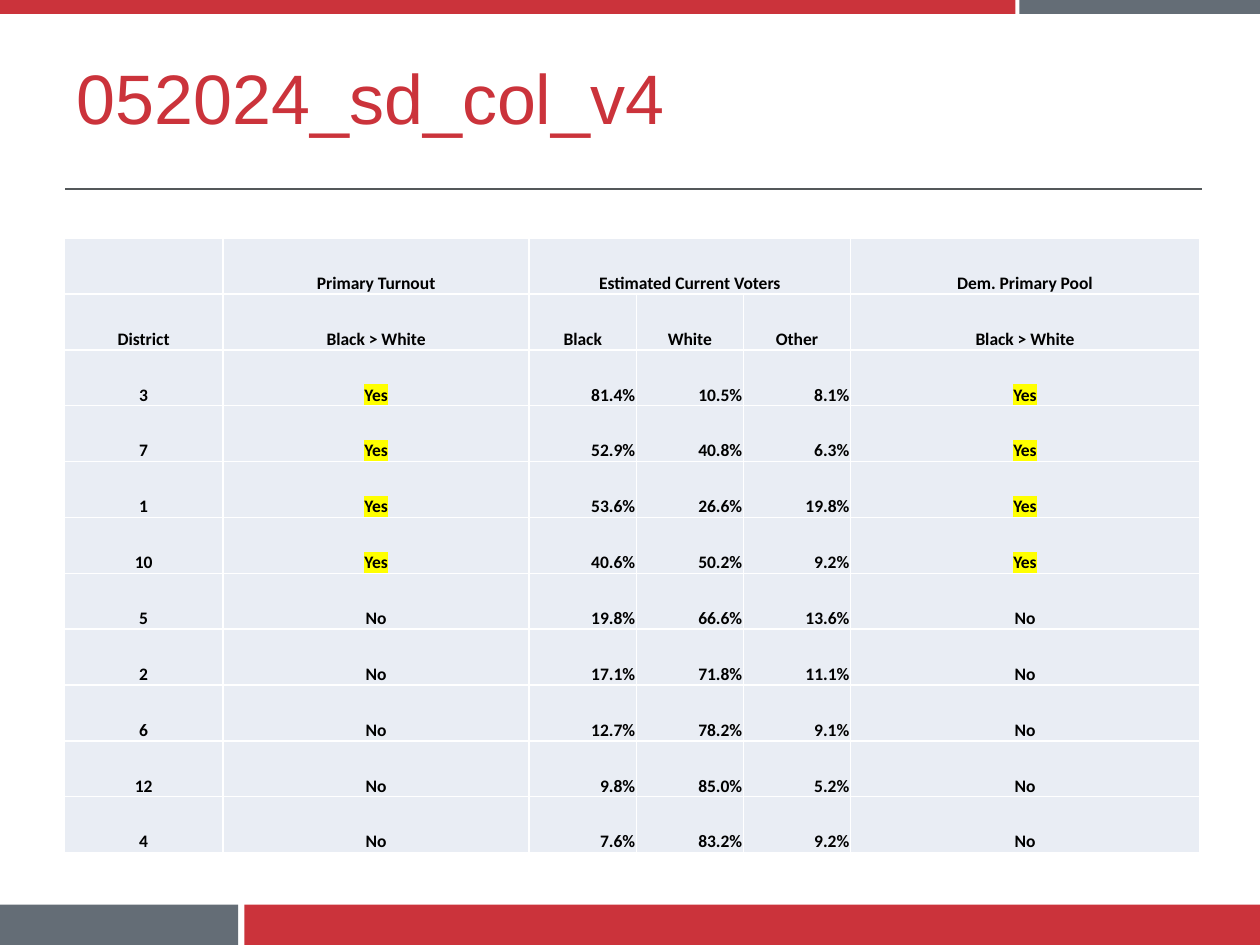
import pptx
import pptx.dml.color
import pptx.enum.shapes
import pptx.enum.text
import pptx.oxml.ns
import pptx.util
from lxml import etree

Inches = pptx.util.Inches
Pt = pptx.util.Pt
RGBColor = pptx.dml.color.RGBColor
Align = pptx.enum.text.PP_ALIGN
Anchor = pptx.enum.text.MSO_ANCHOR
qn = pptx.oxml.ns.qn

RED = RGBColor(0xCB, 0x33, 0x3B)
GRAY = RGBColor(0x64, 0x6D, 0x76)
RULE_GRAY = RGBColor(0x54, 0x58, 0x5A)
CELL_BLUE = RGBColor(0xE9, 0xED, 0xF4)
BLACK = RGBColor(0, 0, 0)
WHITE = RGBColor(0xFF, 0xFF, 0xFF)
YELLOW = RGBColor(0xFF, 0xFF, 0)

BANDS = [
    (1.94, 7.18, 8.06, 0.32, RED),
    (0, 7.18, 1.89, 0.32, GRAY),
    (0, 0, 8.06, 0.11, RED),
    (8.09, 0, 1.91, 0.11, GRAY),
]
COLUMN_WIDTHS = [1.26, 2.43, 0.85, 0.85, 0.85, 2.77]
TABLE_HEIGHT = 4.88
HEADERS = [
    ("", "Primary Turnout", "Estimated Current Voters", "", "", "Dem. Primary Pool"),
    ("District", "Black > White", "Black", "White", "Other", "Black > White"),
]
DISTRICTS = [
    ("3", "Yes", "81.4%", "10.5%", "8.1%", "Yes"),
    ("7", "Yes", "52.9%", "40.8%", "6.3%", "Yes"),
    ("1", "Yes", "53.6%", "26.6%", "19.8%", "Yes"),
    ("10", "Yes", "40.6%", "50.2%", "9.2%", "Yes"),
    ("5", "No", "19.8%", "66.6%", "13.6%", "No"),
    ("2", "No", "17.1%", "71.8%", "11.1%", "No"),
    ("6", "No", "12.7%", "78.2%", "9.1%", "No"),
    ("12", "No", "9.8%", "85.0%", "5.2%", "No"),
    ("4", "No", "7.6%", "83.2%", "9.2%", "No"),
]


def add_band(slide, left, top, width, height, color):
    band = slide.shapes.add_shape(
        pptx.enum.shapes.MSO_SHAPE.RECTANGLE,
        Inches(left), Inches(top), Inches(width), Inches(height))
    band.shadow.inherit = False
    band.fill.solid()
    band.fill.fore_color.rgb = color
    band.line.fill.background()


def add_rule(slide):
    rule = slide.shapes.add_connector(
        pptx.enum.shapes.MSO_CONNECTOR.STRAIGHT,
        Inches(0.52), Inches(1.5), Inches(9.54), Inches(1.5))
    rule.line.color.rgb = RULE_GRAY
    rule.line.width = Pt(0.75)
    etree.SubElement(rule._element.spPr, qn("a:effectLst"))


def set_title(slide, text):
    title = slide.shapes.title
    title.left, title.top = Inches(0.51), Inches(0.13)
    title.width, title.height = Inches(7.55), Inches(1.27)
    frame = title.text_frame
    frame.text = text
    frame.vertical_anchor = Anchor.MIDDLE
    paragraph = frame.paragraphs[0]
    paragraph.alignment = Align.LEFT
    font = paragraph.runs[0].font
    font.size = Pt(40)
    font.name = "Arial"
    font.color.rgb = RED


def add_solid_color(parent, color):
    etree.SubElement(parent, qn("a:srgbClr"), val=str(color))


def set_borders(cell):
    properties = cell._tc.get_or_add_tcPr()
    for side in ("a:lnL", "a:lnR", "a:lnT", "a:lnB"):
        border = etree.SubElement(properties, qn(side), w=str(Pt(1)))
        add_solid_color(etree.SubElement(border, qn("a:solidFill")), WHITE)


def format_text(cell, text):
    cell.text = text
    paragraph = cell.text_frame.paragraphs[0]
    paragraph.alignment = Align.RIGHT if text.endswith("%") else Align.CENTER
    run = paragraph.runs[0]
    run.font.size = Pt(10)
    run.font.bold = True
    run.font.color.rgb = BLACK
    if text == "Yes":
        properties = run._r.get_or_add_rPr()
        add_solid_color(etree.SubElement(properties, qn("a:highlight")), YELLOW)
    run.font.name = "Calibri"


def format_cell(cell, text):
    cell.margin_left = cell.margin_right = cell.margin_top = Inches(0.01)
    cell.margin_bottom = 0
    cell.vertical_anchor = Anchor.BOTTOM
    set_borders(cell)
    cell.fill.solid()
    cell.fill.fore_color.rgb = CELL_BLUE
    if text:
        format_text(cell, text)


def add_district_table(slide):
    rows = HEADERS + DISTRICTS
    table = slide.shapes.add_table(
        len(rows), len(COLUMN_WIDTHS), Inches(0.51), Inches(1.89),
        Inches(sum(COLUMN_WIDTHS)), Inches(TABLE_HEIGHT)).table
    table.first_row = table.horz_banding = False
    for column, width in zip(table.columns, COLUMN_WIDTHS):
        column.width = Inches(width)
    for row_index, row in enumerate(rows):
        for column_index, text in enumerate(row):
            format_cell(table.cell(row_index, column_index), text)
    table.cell(0, 2).merge(table.cell(0, 4))


def main():
    presentation = pptx.Presentation()
    presentation.slide_width = Inches(10)
    presentation.slide_height = Inches(7.5)
    slide = presentation.slides.add_slide(presentation.slide_layouts[5])
    for band in BANDS:
        add_band(slide, *band)
    add_rule(slide)
    set_title(slide, "052024_sd_col_v4")
    add_district_table(slide)
    presentation.save("out.pptx")


if __name__ == "__main__":
    main()
